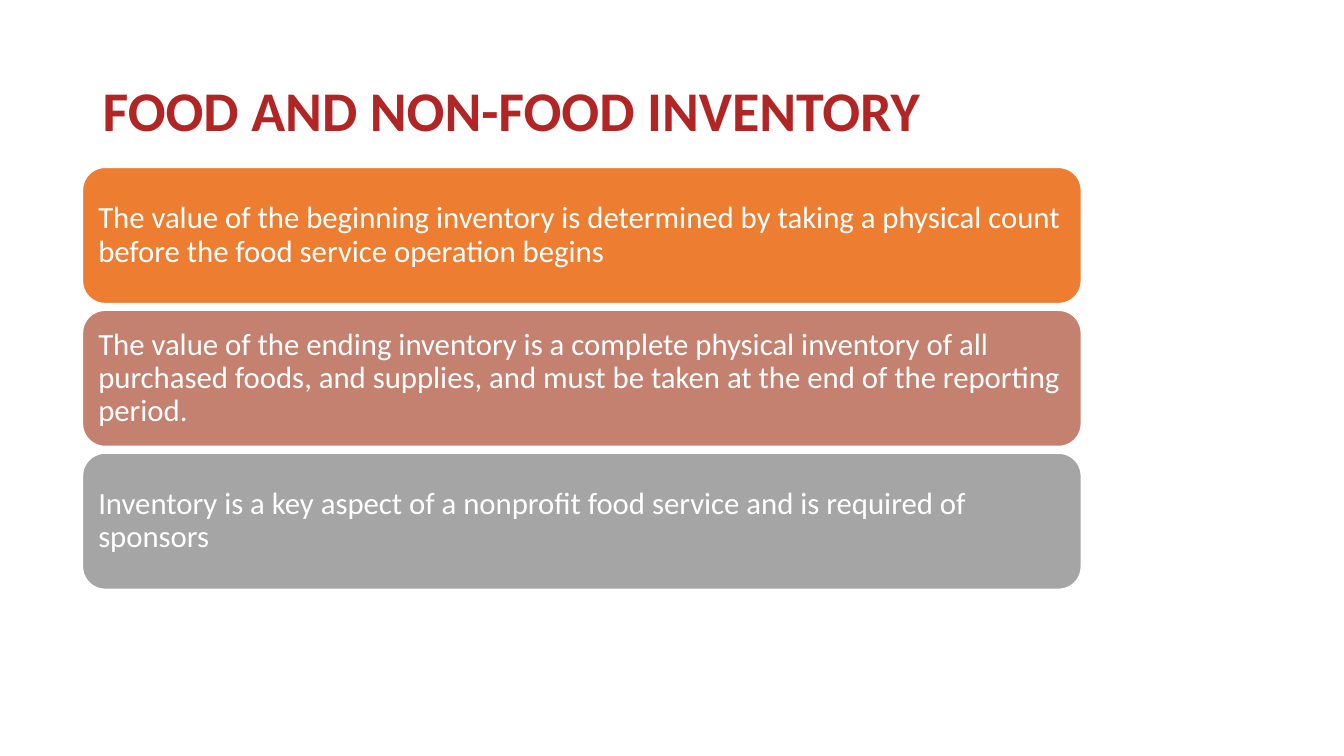
from dataclasses import dataclass

from pptx import Presentation
from pptx.dml.color import RGBColor
from pptx.enum.shapes import MSO_SHAPE
from pptx.enum.text import MSO_ANCHOR, MSO_AUTO_SIZE, PP_ALIGN
from pptx.slide import Slide
from pptx.text.text import TextFrame
from pptx.util import Cm, Pt

ROUNDED = MSO_SHAPE.ROUNDED_RECTANGLE
MIDDLE = MSO_ANCHOR.MIDDLE
LEFT = PP_ALIGN.LEFT
NO_AUTOFIT = MSO_AUTO_SIZE.NONE
TITLE_ONLY = 5


@dataclass(frozen=True)
class Theme:
    font: str = "Calibri"
    title_size: float = 40
    card_size: float = 22
    title: str = "B12524"
    white: str = "FFFFFF"
    orange: str = "ED7D31"
    clay: str = "C48170"
    gray: str = "A5A5A5"


@dataclass(frozen=True)
class Card:
    text: str
    fill: str


THEME = Theme()
CARD_LEFT, CARD_TOP, CARD_WIDTH, CARD_HEIGHT = 2.08, 4.22, 25.17, 3.43
CARD_PITCH = 3.6
CARD_INSET = 0.23

CARDS = [
    Card("The value of the beginning inventory is determined by taking a "
         "physical count before the food service operation begins", THEME.orange),
    Card("The value of the ending inventory is a complete physical inventory of "
         "all purchased foods, and supplies, and must be taken at the end of the "
         "reporting period.", THEME.clay),
    Card("Inventory is a key aspect of a nonprofit food service and is required "
         "of sponsors", THEME.gray),
]


def write(tf: TextFrame, text: str, size: float, color: str, bold: bool = False) -> None:
    """Set one left-aligned, vertically centred paragraph."""
    tf.word_wrap = True
    tf.auto_size = NO_AUTOFIT
    tf.vertical_anchor = MIDDLE
    p = tf.paragraphs[0]
    p.alignment = LEFT
    p.line_spacing = 0.9
    r = p.add_run()
    r.text = text
    r.font.name = THEME.font
    r.font.size = Pt(size)
    r.font.bold = bold
    r.font.color.rgb = RGBColor.from_string(color)


def add_title(s: Slide, text: str) -> None:
    sp = s.shapes.title
    sp.left, sp.top, sp.width, sp.height = Cm(2.33), Cm(1.02), Cm(29.21), Cm(3.68)
    write(sp.text_frame, text, THEME.title_size, THEME.title, bold=True)


def add_card(s: Slide, card: Card, row: int) -> None:
    sp = s.shapes.add_shape(ROUNDED, Cm(CARD_LEFT), Cm(CARD_TOP + row * CARD_PITCH),
                            Cm(CARD_WIDTH), Cm(CARD_HEIGHT))
    sp.shadow.inherit = False
    sp.fill.solid()
    sp.fill.fore_color.rgb = RGBColor.from_string(card.fill)
    sp.line.color.rgb = RGBColor.from_string(THEME.white)
    sp.line.width = Pt(1)
    tf = sp.text_frame
    tf.margin_left = tf.margin_right = Cm(CARD_INSET)
    tf.margin_top = tf.margin_bottom = Cm(CARD_INSET)
    write(tf, card.text, THEME.card_size, THEME.white)


def main() -> None:
    prs = Presentation()
    prs.slide_width, prs.slide_height = Cm(33.87), Cm(19.05)
    s = prs.slides.add_slide(prs.slide_layouts[TITLE_ONLY])
    add_title(s, "FOOD AND NON-FOOD INVENTORY")
    for row, card in enumerate(CARDS):
        add_card(s, card, row)
    prs.save("out.pptx")


if __name__ == "__main__":
    main()
